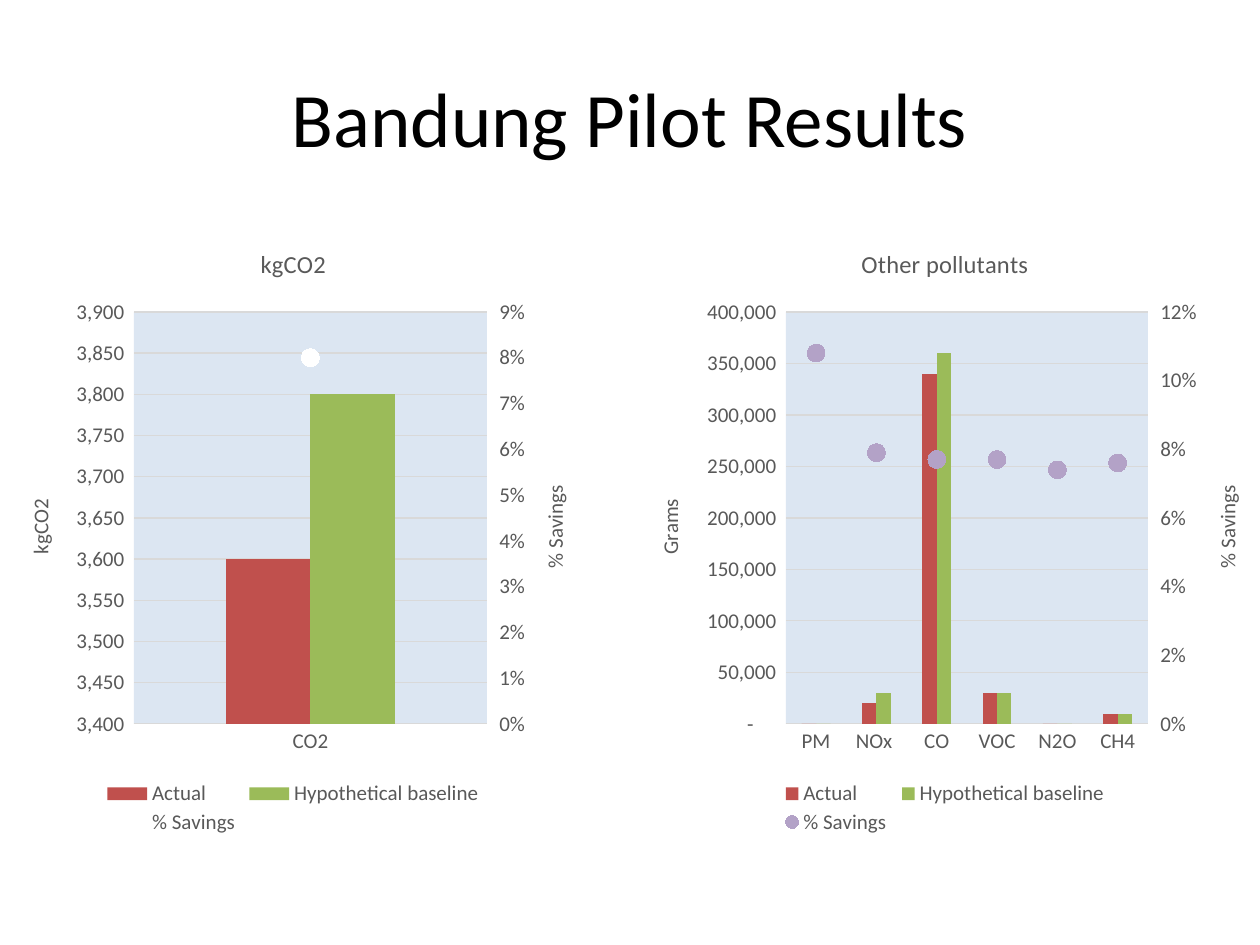
from pptx import Presentation
from pptx import util as u
from pptx import oxml
from pptx.chart import axis as ax
from pptx.chart import data as cd
from pptx.dml import color as dc
from pptx.enum import chart as ce
from pptx.enum import text as te
from pptx.oxml import ns

PX = 914400 / 126
GREY, GRID, PANEL = "595959", "D9D9D9", "DCE6F2"
RED, GREEN, PURPLE, WHITE = "C0504D", "9BBB59", "B3A2C7", "FFFFFF"
ACCOUNTING = '_(* #,##0_);_(* \\(#,##0\\);_(* "-"??_);_(@_)'

CO2 = dict(
    title="kgCO2", unit="kgCO2", cats=["CO2"],
    actual=[3600], baseline=[3800], savings=[0.08],
    left=dict(minimum_scale=3400, maximum_scale=3900, major_unit=50),
    right=dict(minimum_scale=0, maximum_scale=0.09, major_unit=0.01),
    plot=(134, 89, 353, 412), key=(100, 555, 386, 60), line=WHITE,
)
POLLUTANTS = dict(
    title="Other pollutants", unit="Grams",
    cats=["PM", "NOx ", "CO", "VOC", "N2O", "CH4"],
    actual=[0, 20000, 340000, 30000, 0, 10000],
    baseline=[0, 30000, 360000, 30000, 0, 10000],
    savings=[0.108, 0.079, 0.077, 0.077, 0.074, 0.076],
    left=dict(minimum_scale=0, maximum_scale=400000, major_unit=50000),
    right=dict(minimum_scale=0, maximum_scale=0.12, major_unit=0.02),
    plot=(156, 89, 362, 412), key=(147, 555, 336, 60), line=None,
)


def px(n):
    return u.Emu(round(n * PX))


def rgb(value):
    return dc.RGBColor.from_string(value)


def apply(target, values):
    for name, value in values.items():
        setattr(target, name, value)


def paint(fill, value):
    fill.solid()
    fill.fore_color.rgb = rgb(value)


def rule(line, value, width=0.75):
    if value is None:
        line.fill.background()
    else:
        line.color.rgb = rgb(value)
        line.width = u.Pt(width)


def write(frame, words, size, color=GREY):
    frame.text = words
    font = frame.paragraphs[0].runs[0].font
    apply(font, dict(name="Calibri", size=u.Pt(size), bold=False))
    font.color.rgb = rgb(color)


def chart_xml(tag, inner):
    return oxml.parse_xml(f'<c:{tag} {ns.nsdecls("c")}>{inner}</c:{tag}>')


def place(part, index, box, size, inner=False):
    for old in part.findall(ns.qn("c:layout")):
        part.remove(old)
    target = '<c:layoutTarget val="inner"/>' if inner else ""
    modes = '<c:xMode val="edge"/><c:yMode val="edge"/>'
    shares = "".join(
        f'<c:{name} val="{length / size[i % 2]:.4f}"/>'
        for i, (name, length) in enumerate(zip("xywh", box))
    )
    part.insert(index, chart_xml(
        "layout", f"<c:manualLayout>{target}{modes}{shares}</c:manualLayout>"))


def format_axis(axis, title, number_format, scale, tick):
    apply(axis, dict(scale, major_tick_mark=tick, minor_tick_mark=ce.XL_TICK_MARK.NONE))
    apply(axis.tick_labels, dict(number_format=number_format, number_format_is_linked=False))
    rule(axis.format.line, None)
    frame = axis.axis_title.text_frame
    write(frame, title, 12)
    frame._txBody.bodyPr.set("rot", "-5400000")


def savings_axis(chart, area):
    savings = chart.plots[0].series[2]._element
    for flag in savings.findall(ns.qn("c:invertIfNegative")):
        savings.remove(flag)
    line_plot = chart_xml(
        "lineChart",
        '<c:grouping val="stacked"/><c:varyColors val="0"/>'
        '<c:marker val="1"/><c:axId val="301"/><c:axId val="302"/>')
    line_plot.insert(2, savings)
    area.find(ns.qn("c:barChart")).addnext(line_plot)

    def axis_xml(tag, own, other, deleted, side, extra):
        return chart_xml(
            tag,
            f'<c:axId val="{own}"/><c:scaling><c:orientation val="minMax"/></c:scaling>'
            f'<c:delete val="{deleted}"/><c:axPos val="{side}"/>'
            f'<c:crossAx val="{other}"/>{extra}')

    values = axis_xml("valAx", 302, 301, 0, "r",
                      '<c:crosses val="max"/><c:crossBetween val="between"/>')
    area.append(values)
    area.append(axis_xml("catAx", 301, 302, 1, "b", '<c:crosses val="autoZero"/>'))
    return ax.ValueAxis(values)


def results_chart(slide, box, spec):
    data = cd.CategoryChartData()
    data.categories = spec["cats"]
    data.add_series("Actual", spec["actual"])
    data.add_series("Hypothetical baseline", spec["baseline"])
    data.add_series("% Savings", spec["savings"], "0%")
    chart = slide.shapes.add_chart(
        ce.XL_CHART_TYPE.COLUMN_CLUSTERED, *map(px, box), data).chart
    apply(chart.font, dict(name="Calibri", size=u.Pt(12)))
    chart.font.color.rgb = rgb(GREY)
    write(chart.chart_title.text_frame, spec["title"], 14)

    categories, left = chart.category_axis, chart.value_axis
    categories.major_tick_mark = ce.XL_TICK_MARK.NONE
    rule(categories.format.line, GRID)
    format_axis(left, spec["unit"], ACCOUNTING, spec["left"], ce.XL_TICK_MARK.NONE)
    rule(left.major_gridlines.format.line, GRID)

    area = chart.plots[0]._element.getparent()
    right = savings_axis(chart, area)
    format_axis(right, "% Savings", "0%", spec["right"], ce.XL_TICK_MARK.OUTSIDE)
    bars, points = chart.plots
    apply(bars, dict(gap_width=219, overlap=0, vary_by_categories=False))
    for series, color in zip(bars.series, (RED, GREEN)):
        paint(series.format.fill, color)
    savings = points.series[0]
    savings.smooth = False
    rule(savings.format.line, spec["line"], 2.25)
    apply(savings.marker, dict(style=ce.XL_MARKER_STYLE.CIRCLE, size=10))
    paint(savings.marker.format.fill, PURPLE)
    rule(savings.marker.format.line, None)

    chart.has_legend = True
    apply(chart.legend, dict(position=ce.XL_LEGEND_POSITION.BOTTOM, include_in_layout=False))
    place(chart.legend._element, 1, spec["key"], box[2:])
    place(area, 0, spec["plot"], box[2:], inner=True)
    area.append(chart_xml(
        "spPr",
        f'<a:solidFill {ns.nsdecls("a")}><a:srgbClr val="{PANEL}"/></a:solidFill>'))


def heading(slide, box, words):
    title = slide.shapes.title
    apply(title, dict(zip(("left", "top", "width", "height"), map(px, box))))
    write(title.text_frame, words, 44, "000000")
    title.text_frame.vertical_anchor = te.MSO_ANCHOR.MIDDLE
    title.text_frame.paragraphs[0].alignment = te.PP_ALIGN.CENTER


def main():
    deck = Presentation()
    apply(deck, dict(slide_width=px(1260), slide_height=px(945)))
    slide = deck.slides.add_slide(deck.slide_layouts[5])
    heading(slide, (63, 38, 1134, 158), "Bandung Pilot Results")
    results_chart(slide, (0, 223, 587, 619), CO2)
    results_chart(slide, (630, 223, 630, 619), POLLUTANTS)
    deck.save("out.pptx")


if __name__ == "__main__":
    main()
